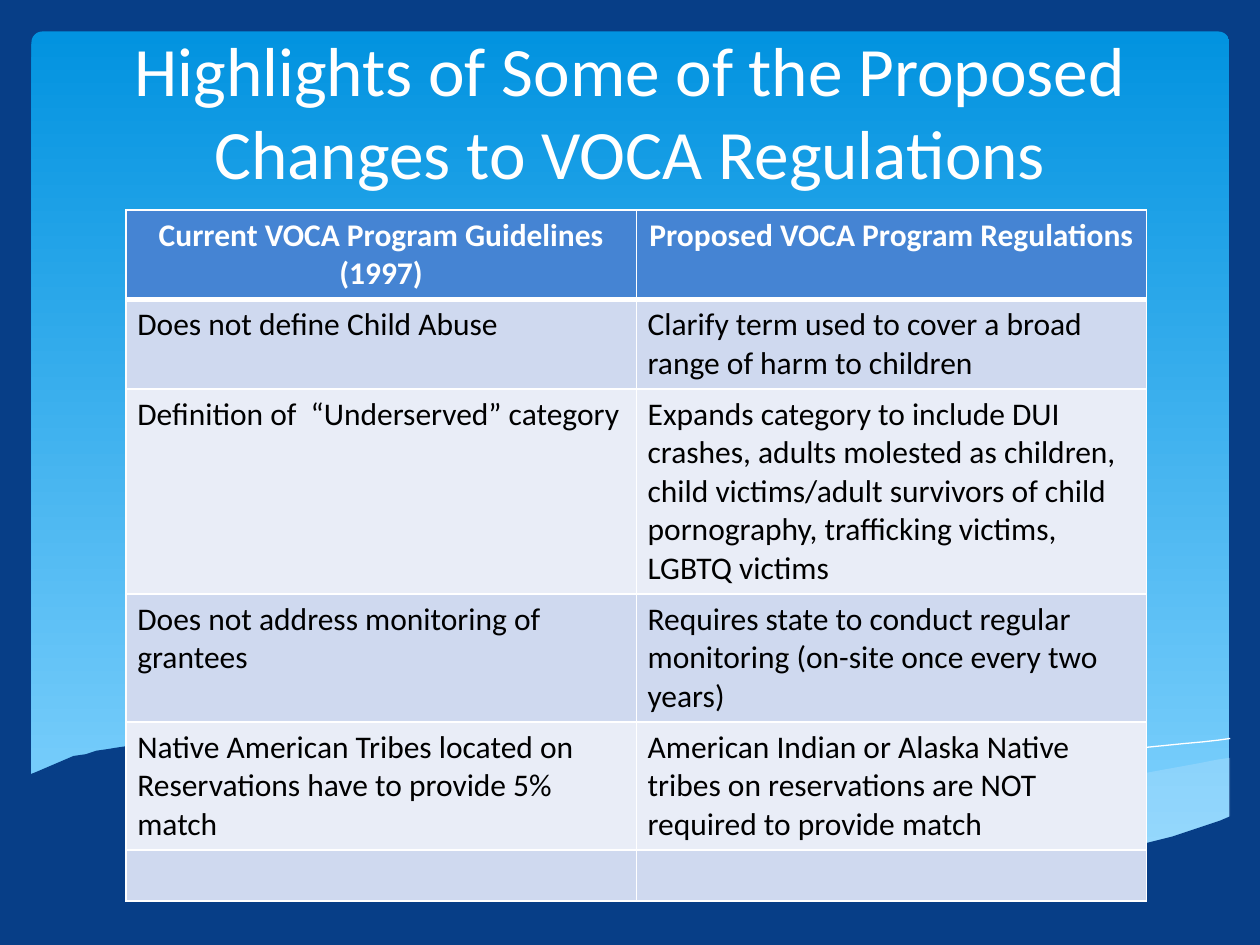
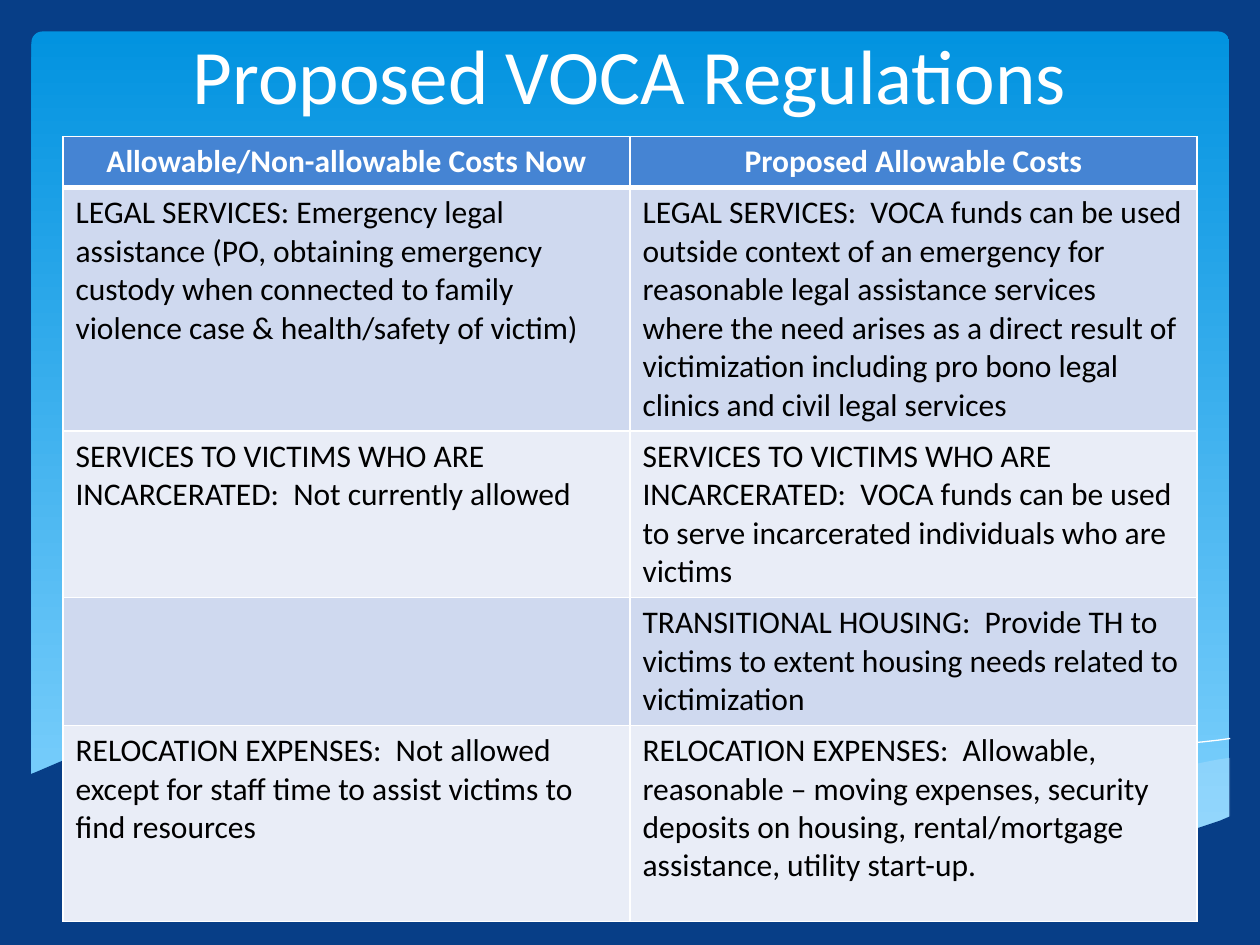
from dataclasses import dataclass
from typing import Optional

import lxml.etree
import pptx
import pptx.dml.color
import pptx.enum.dml
import pptx.enum.shapes
import pptx.enum.text
import pptx.oxml
import pptx.oxml.ns
import pptx.util

Pt = pptx.util.Pt
RGB = pptx.dml.color.RGBColor
qn = pptx.oxml.ns.qn

# Shared look
NAVY = RGB(0x07, 0x3E, 0x87)
SKY_TOP = RGB(0x02, 0x93, 0xE0)
SKY_LOW = RGB(0x83, 0xD3, 0xFE)
FOAM = RGB(0xC6, 0xE7, 0xFC)
WHITE = RGB(0xFF, 0xFF, 0xFF)
BLACK = RGB(0x00, 0x00, 0x00)
HEAD = RGB(0x45, 0x84, 0xD3)
BANDS = (RGB(0xE9, 0xED, 0xF7), RGB(0xCF, 0xD9, 0xEF))
FONT = "Calibri"
TEXT_SIZE = 18
TITLE_ONLY = 5

Point = tuple[float, float]
Box = tuple[float, float, float, float]


@dataclass(frozen=True)
class Wave:
    """Smooth strands joined end to end; no fill means a thin white line."""
    strands: list[list[Point]]
    fill: Optional[RGB] = None
    alpha: int = 100


@dataclass(frozen=True)
class Page:
    title: str
    size: float
    title_box: Box
    corner: Point
    width: float
    inset: float
    heights: list[float]
    rows: list[tuple[str, str]]


WAVES = [
    # Right swell
    Wave([
        [(703, 433), (664, 440), (620.5, 450), (580, 460), (543, 468),
         (509, 474.5), (476.5, 480)],
        [(476.5, 480), (508, 484.5), (537, 487.5), (579, 489.5),
         (615.5, 488), (646.5, 484), (674.5, 477.5), (703, 467)],
    ], FOAM, 29),
    # Middle swell
    Wave([
        [(643.5, 486), (603.5, 480), (558.5, 472.5), (509, 462),
         (453.5, 449.5), (410.5, 439), (371, 432), (335, 427),
         (302.5, 424), (260.5, 422.5), (226, 425), (206.5, 427)],
        [(206.5, 427), (247, 432.5), (291.5, 441.5), (324, 449.5),
         (381.5, 462), (433.5, 473), (479.5, 481), (520.5, 486.5),
         (557.5, 489), (589.5, 489.5), (618.5, 489), (643.5, 486)],
    ], FOAM, 40),
    # Crest lines
    Wave([[(223, 430), (247.5, 426), (279.5, 424), (324.5, 424),
           (368, 427.5), (419, 433.5), (479.5, 443), (548, 457),
           (599, 469.5), (654, 484.5)]]),
    Wave([[(442, 474.5), (501, 458.5), (559.5, 445), (624, 432),
           (666, 426), (703, 422.5)]]),
    # Ground
    Wave([
        [(703.5, 466.5), (669.5, 478), (638.5, 484.5), (602.5, 488),
         (571, 488.5), (535.5, 486.5), (495.5, 482.5), (450.5, 475),
         (399.5, 465.5), (322, 448), (263, 435), (210, 426),
         (165.5, 422.5), (127.5, 422), (95, 423.5), (68.5, 427),
         (42.5, 432.5), (16.5, 443)],
        [(16.5, 443), (16.5, 526.5)],
        [(16.5, 526.5), (703.5, 526.5)],
    ], NAVY),
]

PAGES = [
    Page(
        "Highlights of Some of the Proposed Changes to VOCA Regulations",
        39.6, (18, 6, 684, 108), (72, 120), 583.2, 6.5,
        [51, 51, 117, 73, 73, 29],
        [
            ("Current VOCA Program Guidelines (1997)",
             "Proposed VOCA Program Regulations"),
            ("Does not define Child Abuse",
             "Clarify term used to cover a broad range of harm to children"),
            ("Definition of  “Underserved” category",
             "Expands category to include DUI crashes, adults molested as "
             "children, child victims/adult survivors of child pornography, "
             "trafficking victims, LGBTQ victims"),
            ("Does not address monitoring of grantees",
             "Requires state to conduct regular monitoring (on-site once "
             "every two years)"),
            ("Native American Tribes located on Reservations have to "
             "provide 5% match",
             "American Indian or Alaska Native tribes on reservations are "
             "NOT required to provide match"),
            ("", ""),
        ],
    ),
    Page(
        "Proposed VOCA Regulations",
        44, (54, 6, 612, 66), (36, 78), 648, 7.2,
        [29, 139, 95, 73, 112],
        [
            ("Allowable/Non-allowable Costs Now", "Proposed Allowable Costs"),
            ("LEGAL SERVICES: Emergency legal assistance (PO, obtaining "
             "emergency custody when connected to family violence case & "
             "health/safety of victim)",
             "LEGAL SERVICES:  VOCA funds can be used outside context of an "
             "emergency for reasonable legal assistance services where the "
             "need arises as a direct result of victimization including pro "
             "bono legal clinics and civil legal services"),
            ("SERVICES TO VICTIMS WHO ARE INCARCERATED:  Not currently "
             "allowed",
             "SERVICES TO VICTIMS WHO ARE INCARCERATED:  VOCA funds can be "
             "used to serve incarcerated individuals who are victims"),
            ("",
             "TRANSITIONAL HOUSING:  Provide TH to victims to extent housing "
             "needs related to victimization"),
            ("RELOCATION EXPENSES:  Not allowed except for staff time to "
             "assist victims to find resources",
             "RELOCATION EXPENSES:  Allowable, reasonable – moving expenses, "
             "security deposits on housing, rental/mortgage assistance, "
             "utility start-up."),
        ],
    ),
]


def smooth(knots: list[Point], steps: int = 4) -> list[Point]:
    """Catmull-Rom curve through the knots; two knots stay a straight line."""
    if len(knots) == 2:
        return knots
    ends = [knots[0], *knots, knots[-1]]
    curve = [knots[0]]
    for a, b, c, d in zip(ends, ends[1:], ends[2:], ends[3:]):
        for step in range(1, steps + 1):
            t = step / steps
            x, y = (
                (2 * q + (r - p) * t + (2 * p - 5 * q + 4 * r - s) * t ** 2
                 + (3 * q - p - 3 * r + s) * t ** 3) / 2
                for p, q, r, s in zip(a, b, c, d))
            curve.append((x, y))
    return curve


def draw_wave(slide: pptx.slide.Slide, wave: Wave) -> None:
    dots = [dot for strand in wave.strands for dot in smooth(strand)]
    pen = slide.shapes.build_freeform(*dots[0], scale=Pt(1))
    pen.add_line_segments(dots[1:], close=wave.fill is not None)
    shape = pen.convert_to_shape()
    shape.shadow.inherit = False
    if wave.fill is None:
        shape.fill.background()
        shape.line.color.rgb = WHITE
        shape.line.width = Pt(0)
        return
    shape.line.fill.background()
    shape.fill.solid()
    shape.fill.fore_color.rgb = wave.fill
    if wave.alpha < 100:
        tint = next(shape.element.spPr.iter(qn("a:srgbClr")))
        lxml.etree.SubElement(tint, qn("a:alpha"), val=str(wave.alpha * 1000))


def draw_scene(slide: pptx.slide.Slide) -> None:
    # Sky panel
    sky = slide.shapes.add_shape(
        pptx.enum.shapes.MSO_SHAPE.ROUNDED_RECTANGLE,
        Pt(18), Pt(18), Pt(684.5), Pt(475))
    sky.adjustments[0] = 0.013
    sky.shadow.inherit = False
    sky.line.fill.background()
    sky.fill.gradient()
    sky.fill.gradient_angle = 270
    for stop, place, color in zip(
            sky.fill.gradient_stops, (0, 1), (SKY_TOP, SKY_LOW)):
        stop.position = place
        stop.color.rgb = color
    for wave in WAVES:
        draw_wave(slide, wave)


def style_text(frame: pptx.text.text.TextFrame, size: float, color: RGB,
               bold: bool, center: bool) -> None:
    align = pptx.enum.text.PP_ALIGN
    para = frame.paragraphs[0]
    para.alignment = align.CENTER if center else align.LEFT
    para.font.name = FONT
    para.font.size = Pt(size)
    para.font.bold = bold
    para.font.color.rgb = color


def draw_title(slide: pptx.slide.Slide, page: Page) -> None:
    title = slide.shapes.title
    title.left, title.top, title.width, title.height = map(Pt, page.title_box)
    # Bring the title in front of the scene
    title.element.getparent().append(title.element)
    frame = title.text_frame
    frame.text = page.title
    frame.word_wrap = True
    frame.auto_size = pptx.enum.text.MSO_AUTO_SIZE.NONE
    frame.vertical_anchor = pptx.enum.text.MSO_ANCHOR.BOTTOM
    style_text(frame, page.size, WHITE, False, True)


def set_edges(cell: pptx.table._Cell, row: int) -> None:
    """White rules, with a heavier one under the header row."""
    widths = {"lnL": 1, "lnR": 1, "lnT": 3 if row == 1 else 1,
              "lnB": 3 if row == 0 else 1}
    props = cell._tc.get_or_add_tcPr()
    for place, (tag, width) in enumerate(widths.items()):
        edge = lxml.etree.Element(qn(f"a:{tag}"), w=str(Pt(width)))
        paint = lxml.etree.SubElement(edge, qn("a:solidFill"))
        lxml.etree.SubElement(paint, qn("a:srgbClr"), val=str(WHITE))
        props.insert(place, edge)


def draw_table(slide: pptx.slide.Slide, page: Page) -> None:
    left, top = page.corner
    count = len(page.rows[0])
    table = slide.shapes.add_table(
        len(page.rows), count, Pt(left), Pt(top),
        Pt(page.width), Pt(sum(page.heights))).table
    for column in table.columns:
        column.width = Pt(page.width / count)
    for row, (height, texts) in enumerate(zip(page.heights, page.rows)):
        table.rows[row].height = Pt(height)
        header = row == 0
        for col, text in enumerate(texts):
            cell = table.cell(row, col)
            cell.margin_left = cell.margin_right = Pt(page.inset)
            cell.margin_top = cell.margin_bottom = Pt(3.6)
            cell.text = text
            style_text(cell.text_frame, TEXT_SIZE,
                       WHITE if header else BLACK, header, header)
            cell.fill.solid()
            cell.fill.fore_color.rgb = HEAD if header else BANDS[row % 2]
            set_edges(cell, row)


def main() -> None:
    deck = pptx.Presentation()
    deck.slide_width, deck.slide_height = Pt(720), Pt(540)
    back = deck.slide_master.background.fill
    back.solid()
    back.fore_color.rgb = NAVY
    for page in PAGES:
        slide = deck.slides.add_slide(deck.slide_layouts[TITLE_ONLY])
        draw_scene(slide)
        draw_title(slide, page)
        draw_table(slide, page)
    deck.save("out.pptx")


if __name__ == "__main__":
    main()
